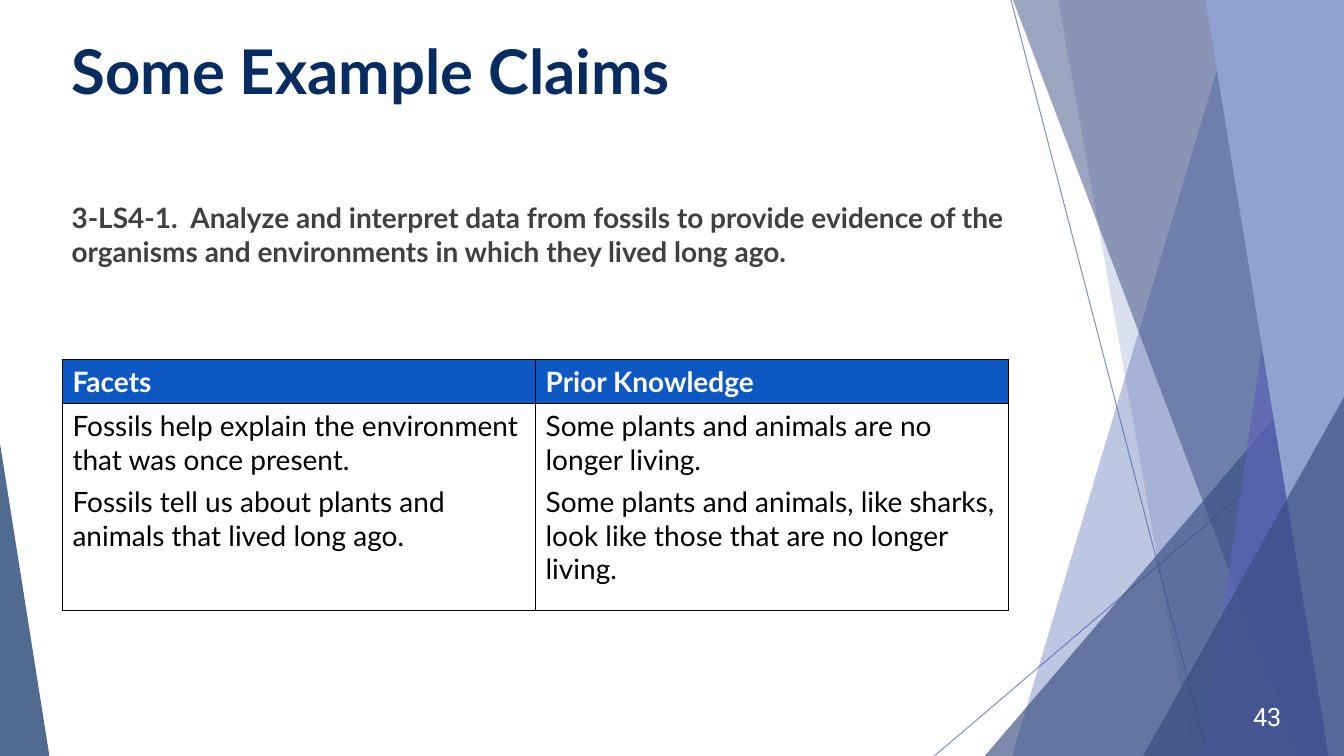
from lxml import etree
from pptx import Presentation
from pptx.dml.color import RGBColor
from pptx.enum import shapes, text
from pptx.oxml import ns
from pptx.util import Pt

TITLE = "Some Example Claims"
GOAL = ("3-LS4-1.  Analyze and interpret data from fossils to provide evidence "
        "of the organisms and environments in which they lived long ago.")
CLAIMS = [
    ("Facets", [
        "Fossils help explain the environment that was once present.",
        "Fossils tell us about plants and animals that lived long ago."]),
    ("Prior Knowledge", [
        "Some plants and animals are no longer living.",
        "Some plants and animals, like sharks, look like those that are no longer living."]),
]
PAGE = "43"

THEME = {
    "font": "Lato", "num font": "Roboto",
    "title": 44, "body": 20, "num": 18,
    "navy": "072C62", "gray": "404040", "white": "FFFFFF", "black": "000000",
    "head": "0E58C4", "blue": "4A66AC", "deep": "384C81",
    "violet": "5C64B7", "pale": "90A2CF",
}

WIDE, HIGH = 960, 540
RAYS = [(722.2, 0, 862.6, HIGH), (WIDE, 290.9, 667.4, HIGH)]
BANDS = [
    ("band", 884.2, 722.9, "blue", 36),
    ("band", 756, 851.8, "blue", 20),
    ("wedge", 703.4, 240.5, WIDE, 1, "deep", 66),
    ("band", 723.6, 928.1, "deep", 50),
    ("band", 938.2, 858.2, "violet", 70),
    ("band", 861.1, 949, "pale", 100),
    ("wedge", 816.5, 283.7, WIDE, 1, "deep", 66),
    ("wedge", 0, 316.8, 35.3, 0, "navy", 70),
]

deck = Presentation()
deck.slide_width, deck.slide_height = Pt(WIDE), Pt(HIGH)
slide = deck.slides.add_slide(deck.slide_layouts[6])
items = slide.shapes


def tint(name):
    return RGBColor.from_string(THEME[name])


def fade(fill, pct):
    for clr in fill.iter(ns.qn("a:srgbClr")):
        etree.SubElement(clr, ns.qn("a:alpha")).set("val", str(pct * 1000))


def paint(shape, color, pct):
    shape.shadow.inherit = False
    shape.fill.solid()
    shape.fill.fore_color.rgb = tint(color)
    if pct < 100:
        fade(shape._element.spPr, pct)
    shape.line.fill.background()


def band(top, foot, color, pct):
    pen = items.build_freeform(Pt(top), 0)
    pen.add_line_segments(
        [(Pt(WIDE), 0), (Pt(WIDE), Pt(HIGH)), (Pt(foot), Pt(HIGH))], close=True)
    paint(pen.convert_to_shape(), color, pct)


def wedge(left, top, right, tip, color, pct):
    shape = items.add_shape(shapes.MSO_SHAPE.ISOSCELES_TRIANGLE,
                            Pt(left), Pt(top), Pt(right - left), Pt(HIGH - top))
    shape.adjustments[0] = tip
    paint(shape, color, pct)


def ray(*ends):
    line = items.add_connector(shapes.MSO_CONNECTOR.STRAIGHT, *map(Pt, ends))
    line.line.color.rgb = tint("blue")
    line.line.width = Pt(0.75)
    fade(line._element.spPr, 70)
    etree.SubElement(line._element.spPr, ns.qn("a:effectLst"))


def write(frame, lines, size, color, bold=False, font="font", after=0):
    frame.text = "\n".join(lines)
    for para in frame.paragraphs:
        para.space_after = Pt(after)
        for run in para.runs:
            run.font.name = THEME[font]
            run.font.size = Pt(THEME[size])
            run.font.bold = bold
            run.font.color.rgb = tint(color)


def label(box, line, *style):
    frame = items.add_textbox(*map(Pt, box)).text_frame
    frame.word_wrap = True
    write(frame, [line], *style)
    return frame


def edge(cell):
    props = cell._tc.get_or_add_tcPr()
    for side in ("lnL", "lnR", "lnT", "lnB"):
        line = etree.SubElement(props, ns.qn("a:" + side), w=str(Pt(1)))
        fill = etree.SubElement(line, ns.qn("a:solidFill"))
        etree.SubElement(fill, ns.qn("a:srgbClr"), val=THEME["black"])


def fill_cell(cell, lines, back, *style, after=0):
    edge(cell)
    cell.fill.solid()
    cell.fill.fore_color.rgb = tint(back)
    write(cell.text_frame, lines, "body", *style, after=after)


for ends in RAYS:
    ray(*ends)
for kind, *spec_row in BANDS:
    (band if kind == "band" else wedge)(*spec_row)

label((44, 20, 677, 104), TITLE, "title", "navy", True)
label((44, 139.7, 723.6, 386), GOAL, "body", "gray", True)

grid = items.add_table(2, len(CLAIMS), Pt(44.6), Pt(257), Pt(676), Pt(179)).table
for row, high in zip(grid.rows, (31, 148)):
    row.height = Pt(high)
for col, (head, lines) in enumerate(CLAIMS):
    grid.columns[col].width = Pt(338)
    fill_cell(grid.cell(0, col), [head], "head", "white", True)
    fill_cell(grid.cell(1, col), lines, "white", "black", after=6)

num = label((868.3, 497.5, 54, 28.8), PAGE, "num", "white", False, "num font")
num.vertical_anchor = text.MSO_ANCHOR.MIDDLE
num.paragraphs[0].alignment = text.PP_ALIGN.RIGHT

deck.save("out.pptx")
